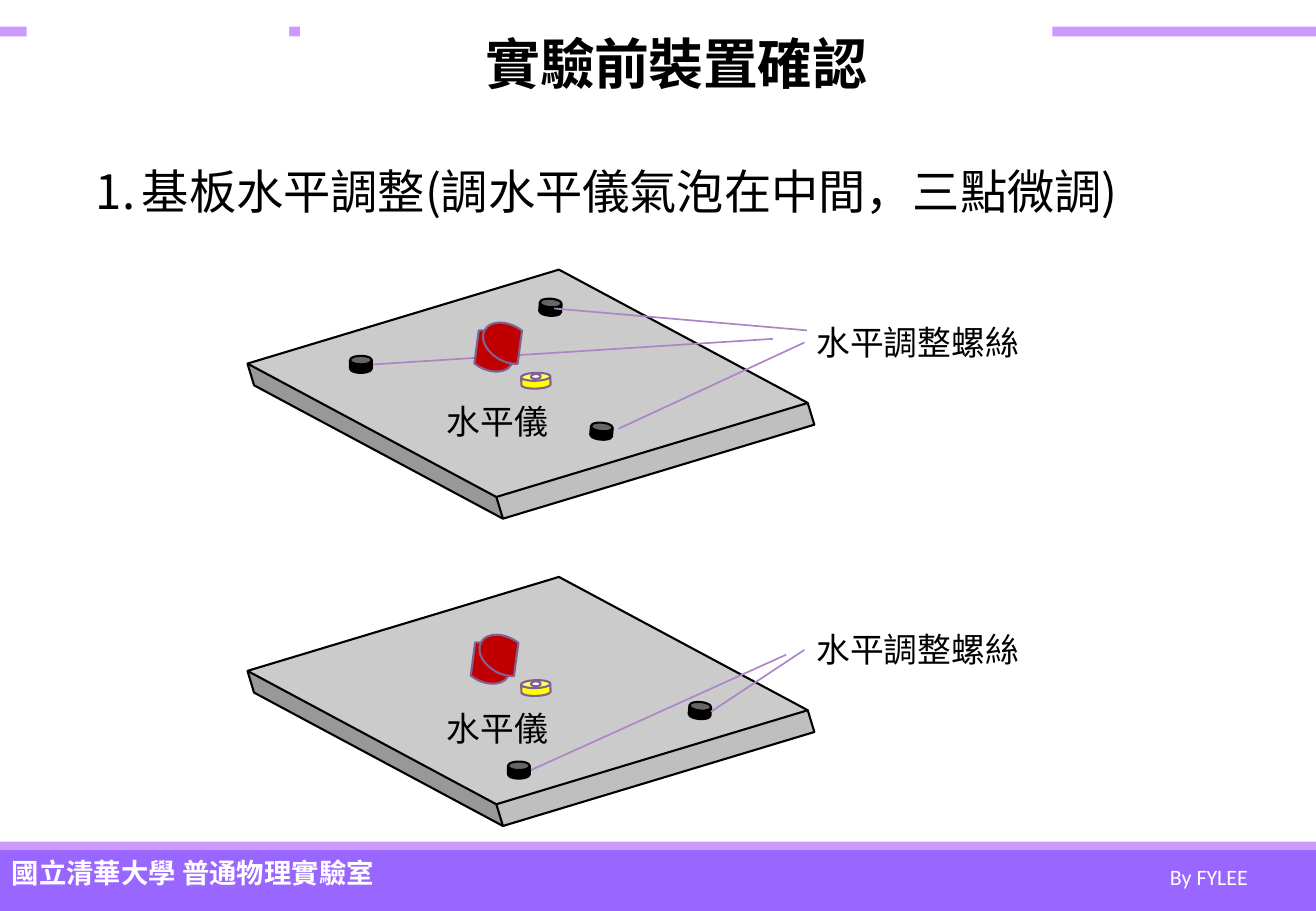
from dataclasses import dataclass

import pptx
import pptx.util
import pptx.dml.color
import pptx.enum.shapes
import pptx.enum.text
from pptx.oxml.ns import qn
from lxml import etree

Inches = pptx.util.Inches
Pt = pptx.util.Pt
SHAPE = pptx.enum.shapes.MSO_SHAPE
ALIGN = pptx.enum.text.PP_ALIGN
ANCHOR = pptx.enum.text.MSO_ANCHOR


@dataclass(frozen=True)
class Theme:
    white: str = "FFFFFF"
    black: str = "000000"
    lilac: str = "CC99FF"
    violet: str = "9966FF"
    board: str = "BFBFBF"
    level: str = "FFFF00"
    magnet: str = "C00000"
    edge: str = "806292"
    lead: str = "AD84C6"
    cjk: str = "Noto Sans CJK SC"
    latin: str = "Calibri"
    title: float = 32.5
    body: float = 28
    label: float = 20
    lab: float = 16.2
    author: float = 13


THEME = Theme()


def rgb(code):
    return pptx.dml.color.RGBColor.from_string(code)


def add_form(shapes, kind, box, fill, line=None, turn=0):
    form = shapes.add_shape(kind, *map(Inches, box))
    form.shadow.inherit = False
    form.fill.solid()
    form.fill.fore_color.rgb = rgb(fill)
    if line:
        form.line.color.rgb = rgb(line)
        form.line.width = Pt(1.25)
    else:
        form.line.fill.background()
    form.rotation = turn
    return form


def style(para, size, face, color, bold=False, track=None):
    """Set the paragraph font for Latin and East Asian text alike."""
    font = para.font
    font.size, font.name, font.bold = Pt(size), face, bold
    font.color.rgb = rgb(color)
    props = para._p.pPr.find(qn("a:defRPr"))
    etree.SubElement(props, qn("a:ea")).set("typeface", face)
    if track:
        props.set("spc", str(track))


def add_text(shapes, box, text, size, face, color, bold=False):
    frame = shapes.add_textbox(*map(Inches, box)).text_frame
    frame.word_wrap = False
    frame.text = text
    style(frame.paragraphs[0], size, face, color, bold)


def add_lead(shapes, start, end):
    line = shapes.add_connector(
        pptx.enum.shapes.MSO_CONNECTOR.STRAIGHT, *map(Inches, start + end))
    line.line.color.rgb = rgb(THEME.lead)
    line.line.width = Pt(1)
    etree.SubElement(line._element.spPr, qn("a:effectLst"))


def add_frame(shapes):
    for box, fill in (((0, 0.22, 10.83, 0.08), THEME.lilac),
                      ((0, 7, 10.83, 0.5), THEME.violet),
                      ((0, 6.93, 10.83, 0.07), THEME.lilac),
                      ((0.22, 0.06, 2.16, 0.4), THEME.white)):
        add_form(shapes, SHAPE.RECTANGLE, box, fill)
    add_text(shapes, (0, 7, 3.22, 0.37), "國立清華大學 普通物理實驗室",
             THEME.lab, THEME.cjk, THEME.white, True)
    add_text(shapes, (9.53, 7.06, 0.85, 0.32), "By FYLEE",
             THEME.author, THEME.latin, THEME.white)


def add_title(shapes, text):
    form = add_form(shapes, SHAPE.RECTANGLE, (2.47, 0.12, 6.19, 0.88), THEME.white)
    frame = form.text_frame
    frame.vertical_anchor = ANCHOR.MIDDLE
    frame.text = text
    para = frame.paragraphs[0]
    para.alignment = ALIGN.CENTER
    para.line_spacing = 0.85
    style(para, THEME.title, THEME.cjk, THEME.black, True, -30)


def add_step(shapes, text):
    frame = shapes.add_textbox(*map(Inches, (0.69, 1.19, 9.77, 1.19))).text_frame
    frame.word_wrap = True
    frame.text = text
    para = frame.paragraphs[0]
    para.line_spacing = 1.2
    props = para._p.get_or_add_pPr()
    props.set("marL", str(Inches(0.38)))
    props.set("indent", str(Inches(-0.38)))
    etree.SubElement(props, qn("a:buFont")).set("typeface", "+mj-lt")
    etree.SubElement(props, qn("a:buAutoNum")).set("type", "arabicPeriod")
    style(para, THEME.body, THEME.cjk, THEME.black)


def add_board(shapes, top, screws, leads):
    """Draw a base plate with its level, screws (x, y, turn) and leader lines."""
    parts = shapes.add_group_shape().shapes
    plate = add_form(parts, SHAPE.CUBE, (2.21, top, 4.32, 1.83),
                     THEME.board, THEME.black, 343.2)
    plate.adjustments[0] = 0.898
    plate._element.spPr.find(qn("a:xfrm")).set("flipH", "1")
    cans = [((4.29, top + 0.74, 0.24, 0.13), THEME.level, THEME.edge, 358.3)]
    cans += [((x, y, 0.18, 0.14), THEME.black, THEME.black, turn)
             for x, y, turn in screws]
    for can in cans:
        add_form(parts, SHAPE.CAN, *can).adjustments[0] = 0.5
    add_form(parts, SHAPE.OVAL, (4.37, top + 0.75, 0.08, 0.04),
             THEME.white, THEME.edge, 358.3)
    for x, drop, width, text in ((6.62, 0.27, 1.88, "水平調整螺絲"),
                                 (3.58, 0.92, 1.04, "水平儀")):
        add_text(parts, (x, top + drop, width, 0.44), text,
                 THEME.label, THEME.latin, THEME.black)
    for start, end in leads:
        add_lead(parts, start, end)


def add_magnet(shapes, left, top):
    """Draw the two facing halves of the red disc."""
    for x, y, turn in ((left, top, 29.6), (left + 0.16, top - 0.065, 209.6)):
        half = add_form(shapes, SHAPE.CHORD, (x, y, 0.44, 0.3),
                        THEME.magnet, THEME.edge, turn)
        for i, angle in enumerate((215.35, 108.83)):
            half.adjustments[i] = angle * 0.6  # 60000 units a degree, over 100000


def main():
    deck = pptx.Presentation()
    deck.slide_width, deck.slide_height = Inches(10.83), Inches(7.5)
    shapes = deck.slides.add_slide(deck.slide_layouts[6]).shapes
    add_frame(shapes)
    add_title(shapes, "實驗前裝置確認")
    add_step(shapes, "基板水平調整(調水平儀氣泡在中間，三點微調)")
    add_board(shapes, 2.33,
              ((4.86, 3.48, 5.2), (2.88, 2.93, 0), (4.44, 2.46, 3.9)),
              (((3.07, 3), (6.36, 2.79)), ((5.09, 3.53), (6.62, 2.82)),
               ((4.56, 2.54), (6.64, 2.72))))
    add_board(shapes, 4.86,
              ((5.67, 5.78, 5.2), (4.18, 6.27, 0)),
              (((4.37, 6.34), (6.47, 5.39)), ((5.85, 5.86), (6.62, 5.35))))
    add_magnet(shapes, 3.8, 2.74)
    add_magnet(shapes, 3.77, 5.31)
    deck.save("out.pptx")


if __name__ == "__main__":
    main()
